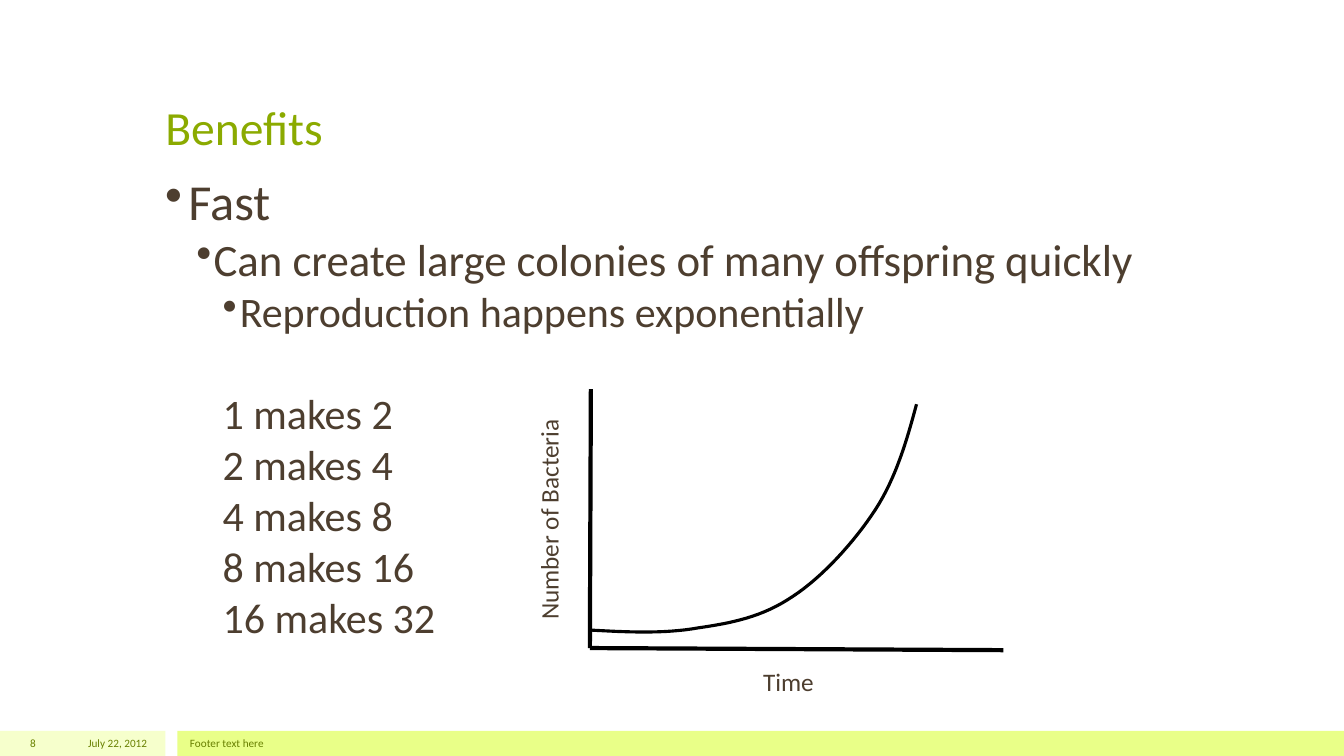
import dataclasses

import lxml.etree
import pptx
import pptx.dml.color
import pptx.enum.shapes
import pptx.enum.text
import pptx.oxml.ns
import pptx.util

ANCHOR = pptx.enum.text.MSO_ANCHOR
ALIGN = pptx.enum.text.PP_ALIGN


@dataclasses.dataclass(frozen=True)
class Theme:
    font: str = "Calibri"
    title: str = "8BAA00"
    body: str = "4D3E2F"
    footer: str = "688000"
    pale_band: str = "F6FFCC"
    bright_band: str = "E9FF88"
    ink: str = "000000"
    title_size: int = 34
    level_sizes: tuple = (36, 32, 30)
    label_size: int = 18
    footer_size: int = 8
    axis_width: float = 3
    curve_width: float = 2.25


THEME = Theme()


@dataclasses.dataclass(frozen=True)
class Box:
    """A rectangle whose inner areas are given in percent of its size."""
    left: float
    top: float
    width: float
    height: float

    def point(self, x, y):
        return (round(self.left + self.width * x / 100),
                round(self.top + self.height * y / 100))

    def area(self, x, y, width, height):
        return Box(*self.point(x, y), round(self.width * width / 100),
                   round(self.height * height / 100))

    def edges(self):
        return self.left, self.top, self.width, self.height


def color(value):
    return pptx.dml.color.RGBColor.from_string(value)


def place(shape, box):
    shape.left, shape.top, shape.width, shape.height = box.edges()


def write(para, text, *, size, ink, align=ALIGN.LEFT, before=0, spacing=1.0,
          level=0, margin=0, indent=0, bullet=None):
    """Write one formatted paragraph; margin and indent are in inches."""
    para.level = level
    properties = para._p.get_or_add_pPr()
    properties.set("marL", str(pptx.util.Inches(margin)))
    properties.set("indent", str(pptx.util.Inches(indent)))
    tag = "a:buChar" if bullet else "a:buNone"
    mark = lxml.etree.SubElement(properties, pptx.oxml.ns.qn(tag))
    if bullet:
        mark.set("char", bullet)
    para.alignment = align
    para.line_spacing = spacing
    para.space_before = pptx.util.Pt(before)
    span = para.add_run()
    span.text = text
    span.font.name = THEME.font
    span.font.size = pptx.util.Pt(size)
    span.font.color.rgb = color(ink)


def add_text(page, box, text, *, anchor=ANCHOR.TOP, wrap=True, **style):
    shape = page.shapes.add_textbox(*box.edges())
    shape.text_frame.word_wrap = wrap
    shape.text_frame.vertical_anchor = anchor
    write(shape.text_frame.paragraphs[0], text, **style)
    return shape


def set_line(shape, width):
    shape.line.color.rgb = color(THEME.ink)
    shape.line.width = pptx.util.Pt(width)


def add_title(page, box, text):
    title = page.shapes.title
    place(title, box)
    title.text_frame.word_wrap = True
    title.text_frame.auto_size = pptx.enum.text.MSO_AUTO_SIZE.NONE
    title.text_frame.vertical_anchor = ANCHOR.BOTTOM
    write(title.text_frame.paragraphs[0], text, size=THEME.title_size, ink=THEME.title)


def add_body(page, box):
    bullets = [("Fast", 0.23, -0.23),
               ("Can create large colonies of many offspring quickly", 0.48, -0.17),
               ("Reproduction happens exponentially", 0.74, -0.17)]
    frame = page.shapes.add_textbox(*box.edges()).text_frame
    frame.word_wrap = True
    for level, (text, margin, indent) in enumerate(bullets):
        para = frame.add_paragraph() if level else frame.paragraphs[0]
        write(para, text, size=THEME.level_sizes[level], ink=THEME.body, level=level,
              margin=margin, indent=indent, bullet="•", spacing=0.9,
              before=4 if level else 0)
    # Doubling series, set apart from the bullets by one line
    for step in range(5):
        write(frame.add_paragraph(), f"{2 ** step} makes {2 ** (step + 1)}",
              size=THEME.level_sizes[2], ink=THEME.body, level=2, margin=0.57,
              spacing=0.9, before=4 if step else 40.5)


def add_axis(page, start, end):
    axis = page.shapes.add_connector(
        pptx.enum.shapes.MSO_CONNECTOR.STRAIGHT, *start, *end)
    set_line(axis, THEME.axis_width)
    lxml.etree.SubElement(axis._element.spPr, pptx.oxml.ns.qn("a:effectLst"))


def bezier(start, first, second, end, steps=16):
    """Points along a cubic curve, without its start."""
    for step in range(1, steps + 1):
        t = step / steps
        weights = ((1 - t) ** 3, 3 * t * (1 - t) ** 2, 3 * t ** 2 * (1 - t), t ** 3)
        yield tuple(sum(w * p[i] for w, p in zip(weights, (start, first, second, end)))
                    for i in (0, 1))


def add_growth_graph(page, box):
    # Axes
    origin = box.point(0, 99.2)
    add_axis(page, box.point(0.24, 0), origin)
    add_axis(page, box.point(100, 100), origin)

    # Growth curve: knots with two control points between them
    controls = [(-0.2, 92.3), (9, 93.1), (18, 93.8), (26.1, 91.5), (34.4, 89.6),
                (41.7, 87.3), (49, 79.5), (56.1, 72.2), (63.9, 58.7), (69, 46.3),
                (73.9, 34.4), (76.6, 20.1), (79, 5.8)]
    points = [box.point(*point) for knot in range(0, len(controls) - 1, 3)
              for point in bezier(*controls[knot:knot + 4])]
    builder = page.shapes.build_freeform(*box.point(*controls[0]))
    builder.add_line_segments(points, close=False)
    curve = builder.convert_to_shape()
    curve.shadow.inherit = False
    curve.fill.background()
    set_line(curve, THEME.curve_width)

    # Axis labels
    style = {"size": THEME.label_size, "ink": THEME.body, "wrap": False}
    label = add_text(page, box.area(-37.3, 41.3, 54.6, 15.4), "Number of Bacteria", **style)
    label.rotation = 270
    add_text(page, box.area(39.5, 104.2, 17.8, 15.4), "Time", **style)


def add_footer(page, box):
    # Bands
    for left, width, fill in ((0, 12.3, THEME.pale_band), (13.2, 86.8, THEME.bright_band)):
        band = page.shapes.add_shape(pptx.enum.shapes.MSO_SHAPE.RECTANGLE,
                                     *box.area(left, 0, width, 100).edges())
        band.shadow.inherit = False
        band.fill.solid()
        band.fill.fore_color.rgb = color(fill)
        band.line.fill.background()
    # Slide number, date and footer text
    for left, width, text, align in ((0, 3.4, "8", ALIGN.RIGHT),
                                     (3.5, 8.2, "July 22, 2012", ALIGN.RIGHT),
                                     (13.4, 75, "Footer text here", ALIGN.LEFT)):
        add_text(page, box.area(left, 0, width, 100), text, anchor=ANCHOR.MIDDLE,
                 size=THEME.footer_size, ink=THEME.footer, align=align)


def add_benefits_page(deck):
    page = deck.slides.add_slide(deck.slide_layouts[5])
    whole = Box(0, 0, deck.slide_width, deck.slide_height)
    add_footer(page, whole.area(0, 96.67, 100, 3.33))
    add_title(page, whole.area(11.55, 4, 76.9, 17.2), "Benefits")
    add_body(page, whole.area(11.55, 22.8, 76.9, 67.33))
    add_growth_graph(page, whole.area(43.89, 51.47, 30.76, 34.53))


def main():
    deck = pptx.Presentation()
    deck.slide_width = pptx.util.Inches(13.33)
    deck.slide_height = pptx.util.Inches(7.5)
    add_benefits_page(deck)
    deck.save("out.pptx")


if __name__ == "__main__":
    main()
